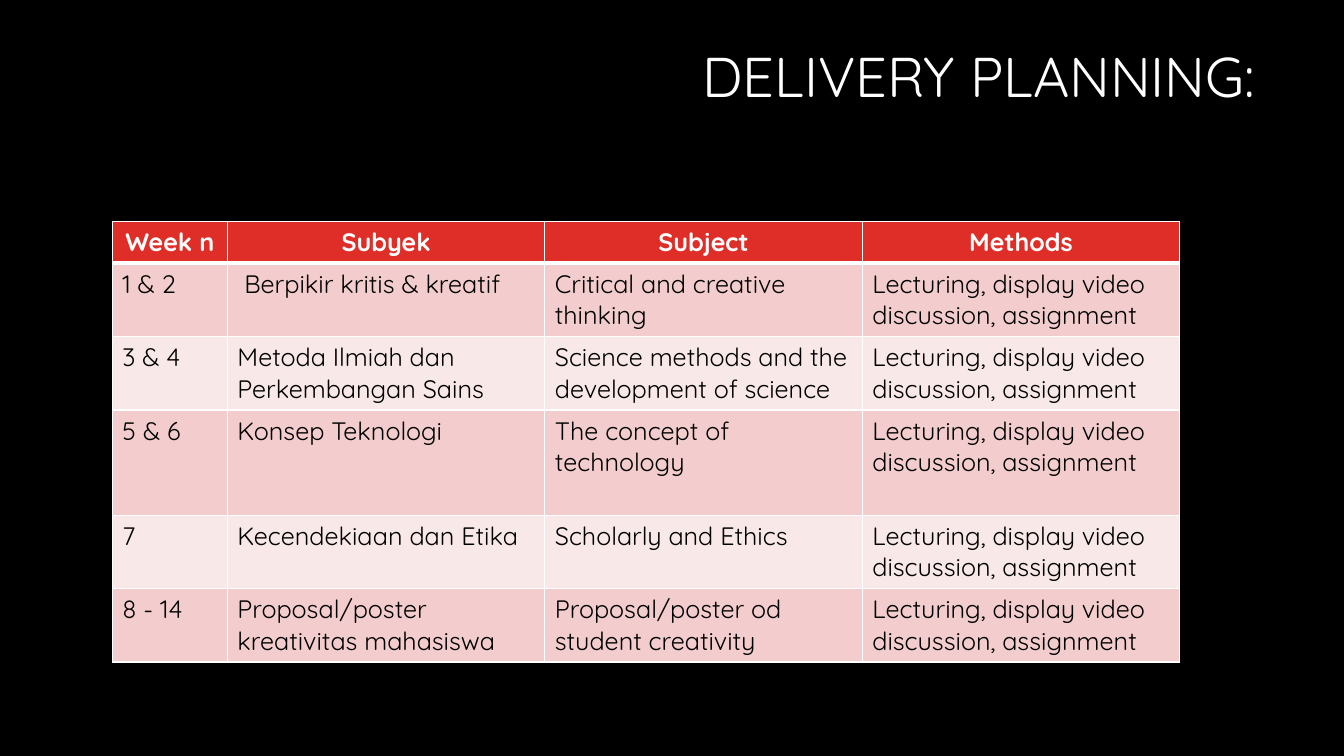
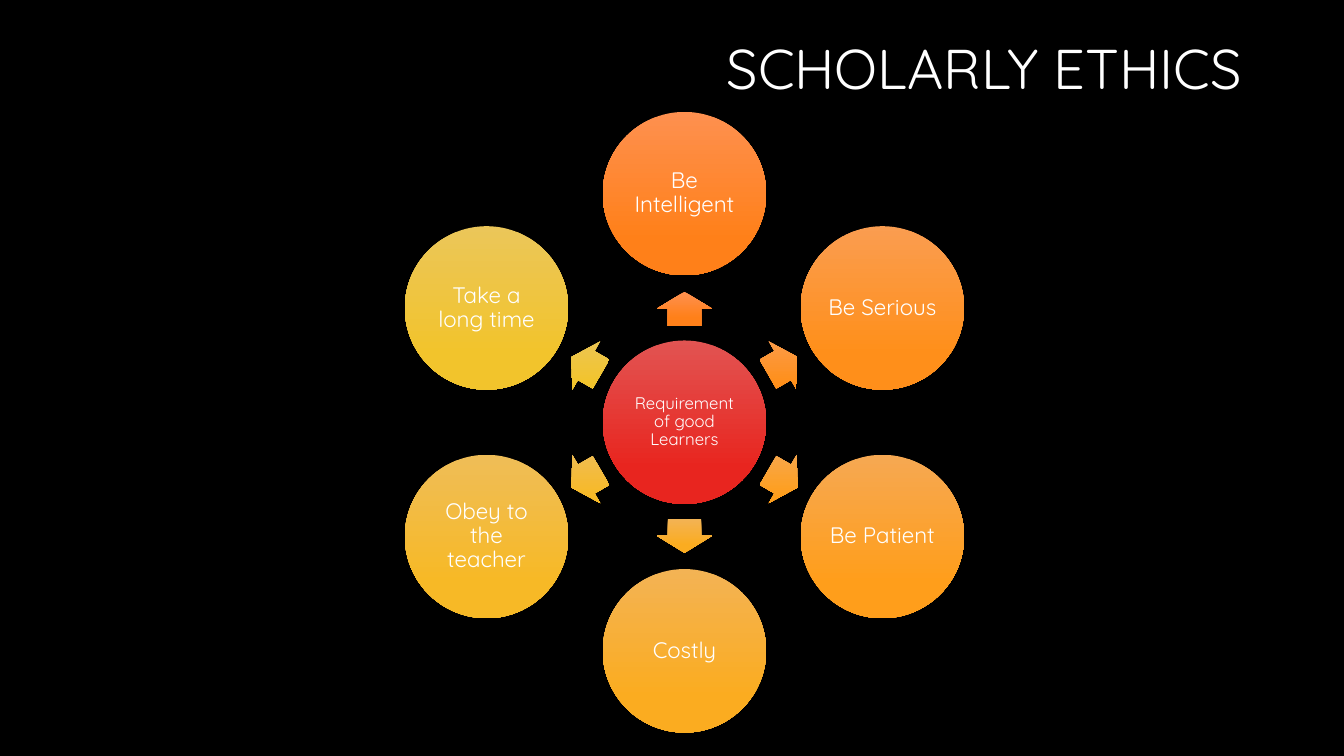
from dataclasses import dataclass
from math import cos, radians, sin

from lxml.etree import SubElement
from pptx import Presentation
from pptx.dml.color import RGBColor
from pptx.enum.shapes import MSO_SHAPE
from pptx.enum.text import MSO_ANCHOR, MSO_AUTO_SIZE, PP_ALIGN
from pptx.oxml.ns import qn
from pptx.util import Cm, Pt


@dataclass(frozen=True)
class Theme:
    """Colours, font and type sizes of the deck."""
    font: str = "Quicksand"
    back: str = "000000"
    light: str = "FFFFFF"
    dark: str = "000000"
    header: str = "DF2E28"
    bands: tuple = ("F3CDCD", "F9E8E8")
    hub: tuple = ("E25452", "E8251F")
    title_size: int = 40
    table_size: int = 18
    spoke_size: int = 16
    hub_size: int = 12


THEME = Theme()

METHOD = "Lecturing, display video discussion, assignment"
HEADINGS = ("Week n", "Subyek", "Subject", "Methods")
WEEKS = (
    ("1 & 2", " Berpikir kritis & kreatif", "Critical and creative thinking"),
    ("3 & 4", "Metoda Ilmiah dan Perkembangan Sains",
     "Science methods and the development of science"),
    ("5 & 6", "Konsep Teknologi", "The concept of technology"),
    ("7", "Kecendekiaan dan Etika", "Scholarly and Ethics"),
    ("8 - 14", "Proposal/poster kreativitas mahasiswa",
     "Proposal/poster od student creativity"),
)
REQUIREMENTS = (
    ("Be Intelligent", ("FE904F", "FF8019")),
    ("Be Serious", ("FA9D50", "FF8F1A")),
    ("Be Patient", ("F6A852", "FF9E1B")),
    ("Costly", ("F3B354", "FBAC20")),
    ("Obey to the teacher", ("EFBD57", "F7B926")),
    ("Take a long time", ("EBC659", "F2C42C")),
)


def write(tf, text, size, color=THEME.light, bold=False, align=PP_ALIGN.LEFT, spacing=1.0):
    """Put one formatted paragraph into a text frame."""
    p = tf.paragraphs[0]
    p.alignment = align
    p.line_spacing = spacing
    r = p.add_run()
    r.text = text
    r.font.name = THEME.font
    r.font.size = Pt(size)
    r.font.bold = bold
    r.font.color.rgb = RGBColor.from_string(color)


class Deck:
    """Holds the presentation, its theme and the current slide."""

    def __init__(self, theme):
        """Start a wide presentation with a plain background."""
        self.theme = theme
        self.prs = Presentation()
        self.prs.slide_width, self.prs.slide_height = Cm(33.87), Cm(19.05)
        fill = self.prs.slide_master.background.fill
        fill.solid()
        fill.fore_color.rgb = RGBColor.from_string(theme.back)
        self.s = None

    def slide(self, title, left, top, height):
        """Add a slide with a right-aligned title."""
        self.s = self.prs.slides.add_slide(self.prs.slide_layouts[5])
        sp = self.s.shapes.title
        sp.left, sp.top, sp.width, sp.height = Cm(left), Cm(top), Cm(23.93), Cm(height)
        tf = sp.text_frame
        tf.auto_size = MSO_AUTO_SIZE.NONE
        tf.vertical_anchor = MSO_ANCHOR.MIDDLE
        write(tf, title, self.theme.title_size, align=PP_ALIGN.RIGHT, spacing=0.9)

    def border(self, cell, **widths):
        """Draw the four sides of a cell, 1 pt unless a width is given."""
        tc_pr = cell._tc.get_or_add_tcPr()
        for side in ("lnL", "lnR", "lnT", "lnB"):
            ln = SubElement(tc_pr, qn(f"a:{side}"), w=str(Pt(widths.get(side, 1))))
            solid = SubElement(ln, qn("a:solidFill"))
            SubElement(solid, qn("a:srgbClr"), val=self.theme.light)

    def table(self, rows, left, top, widths, heights):
        """Add a table with a header row and banded body rows."""
        t = self.theme
        tbl = self.s.shapes.add_table(len(rows), len(widths), Cm(left), Cm(top),
                                      Cm(sum(widths)), Cm(sum(heights))).table
        for col, width in zip(tbl.columns, widths):
            col.width = Cm(width)
        for i, (row, height) in enumerate(zip(rows, heights)):
            tbl.rows[i].height = Cm(height)
            head = i == 0
            rules = {0: {"lnB": 3}, 1: {"lnT": 3}}.get(i, {})
            for j, text in enumerate(row):
                cell = tbl.cell(i, j)
                self.border(cell, **rules)
                cell.fill.solid()
                cell.fill.fore_color.rgb = RGBColor.from_string(
                    t.header if head else t.bands[(i - 1) % 2])
                write(cell.text_frame, text, t.table_size, bold=head,
                      color=t.light if head else t.dark,
                      align=PP_ALIGN.CENTER if head else PP_ALIGN.LEFT)

    def shape(self, kind, x, y, width, height, colors):
        """Add a shape centred on a point, with a vertical gradient."""
        sp = self.s.shapes.add_shape(kind, Cm(x - width / 2), Cm(y - height / 2),
                                     Cm(width), Cm(height))
        sp.shadow.inherit = False
        sp.line.fill.background()
        sp.fill.gradient()
        sp.fill.gradient_angle = 270
        for stop, color, position in zip(sp.fill.gradient_stops, colors, (0, 0.78)):
            stop.color.rgb = RGBColor.from_string(color)
            stop.position = position
        sp._element.spPr.find(qn("a:gradFill")).set("rotWithShape", "0")
        return sp

    def circle(self, text, x, y, colors, size):
        """Add a labelled circle."""
        sp = self.shape(MSO_SHAPE.OVAL, x, y, 4.12, 4.12, colors)
        tf = sp.text_frame
        tf.word_wrap = True
        tf.vertical_anchor = MSO_ANCHOR.MIDDLE
        tf.margin_left = tf.margin_right = tf.margin_top = tf.margin_bottom = Cm(0.05)
        write(tf, text, size, align=PP_ALIGN.CENTER, spacing=0.9)

    def arrow(self, x, y, angle, colors):
        """Add a block arrow turned to an angle."""
        sp = self.shape(MSO_SHAPE.RIGHT_ARROW, x, y, 0.86, 1.4, colors)
        sp.adjustments[0], sp.adjustments[1] = 0.6, 0.5
        sp.rotation = angle % 360

    def radial(self, hub, spokes, x, y):
        """Add a hub with arrows to circles spread evenly around it."""
        self.circle(hub, x, y, self.theme.hub, self.theme.hub_size)
        for i, (text, colors) in enumerate(spokes):
            angle = 360 * i / len(spokes) - 90
            dx, dy = cos(radians(angle)), sin(radians(angle))
            self.arrow(x + 2.86 * dx, y + 2.86 * dy, angle, colors)
            self.circle(text, x + 5.76 * dx, y + 5.76 * dy, colors, self.theme.spoke_size)


def main():
    """Build and save the deck."""
    deck = Deck(THEME)
    deck.slide("DELIVERY PLANNING:", 7.95, 0.94, 2.1)
    deck.table([HEADINGS] + [(*week, METHOD) for week in WEEKS], 2.83, 5.58,
               (2.9, 8, 8, 8), (1.05, 1.85, 1.85, 2.65, 1.85, 1.85))
    deck.slide("SCHOLARLY ETHICS", 7.62, 0, 3.58)
    deck.radial("Requirement of good Learners", REQUIREMENTS, 17.25, 10.64)
    deck.prs.save("out.pptx")


if __name__ == "__main__":
    main()
